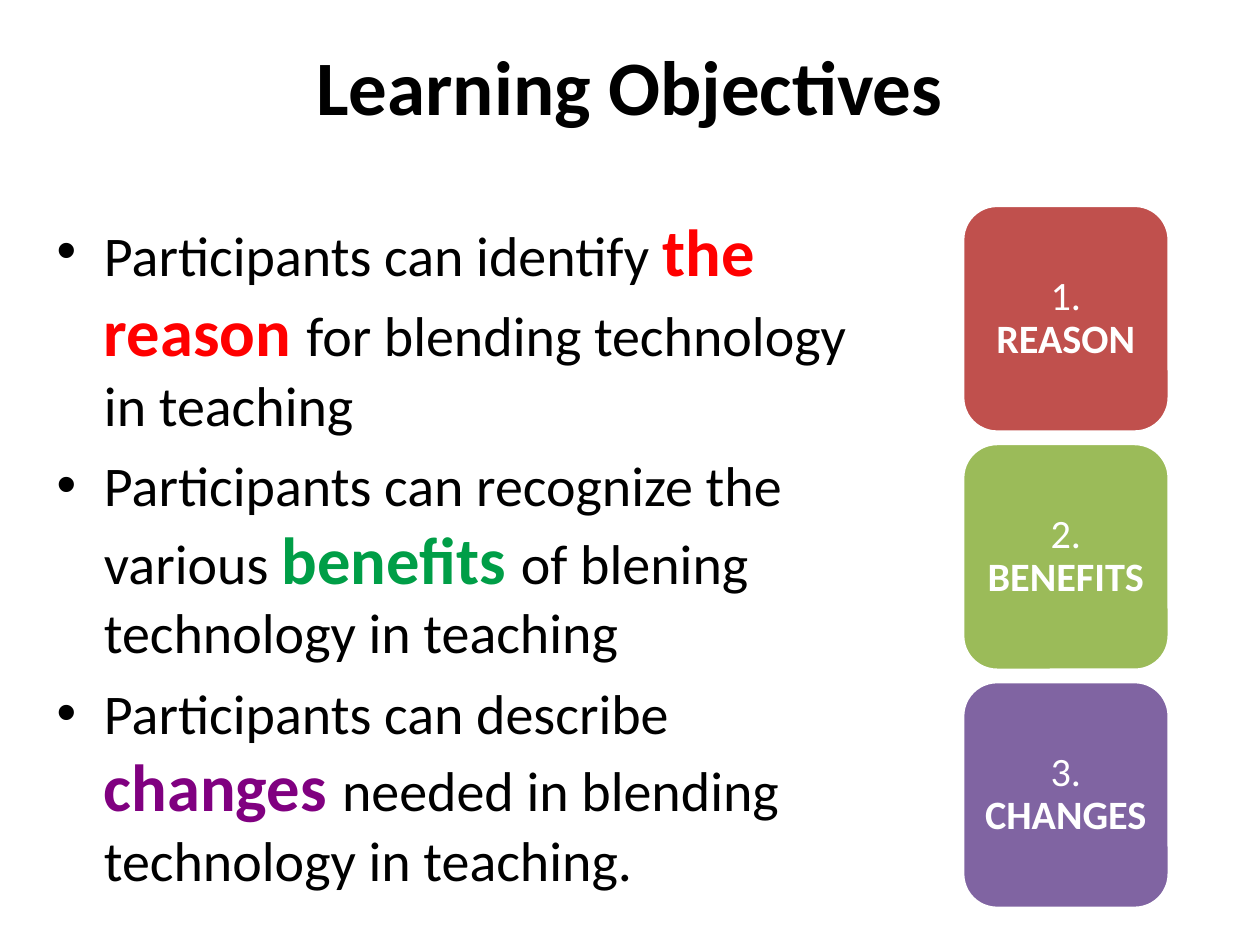
"""Build the Learning Objectives slide."""
from pptx import Presentation
from pptx.dml.color import RGBColor
from pptx.enum.shapes import MSO_SHAPE
from pptx.enum.text import MSO_ANCHOR, MSO_AUTO_SIZE, PP_ALIGN
from pptx.util import Inches, Pt

ROUNDED = MSO_SHAPE.ROUNDED_RECTANGLE
MIDDLE, CENTER = MSO_ANCHOR.MIDDLE, PP_ALIGN.CENTER
NO_FIT = MSO_AUTO_SIZE.NONE
BLACK, WHITE = "000000", "FFFFFF"

TITLE = "Learning Objectives"
OBJECTIVES = [
    ("Participants can identify ", "the reason ",
     "for blending technology in teaching", "FF0000"),
    ("Participants can recognize the various ", "benefits ",
     "of blening technology in teaching", "009E47"),
    ("Participants can describe ", "changes ",
     "needed in blending technology in teaching.", "800080"),
]
CARDS = [("REASON", "C0504D"), ("BENEFITS", "9BBB59"), ("CHANGES", "8064A2")]
CARD_LEFT, CARD_TOP, CARD_W, CARD_H, CARD_PITCH = 7.64, 1.63, 1.64, 1.8, 1.89


def color(value):
    return RGBColor.from_string(value)


def add_run(p, text, size=32, fill=BLACK, bold=False):
    r = p.add_run()
    r.text = text
    r.font.name = "Calibri"
    r.font.size = Pt(size)
    r.font.bold = bold
    r.font.color.rgb = color(fill)


def place(sp, left, top, width, height):
    sp.left, sp.top = Inches(left), Inches(top)
    sp.width, sp.height = Inches(width), Inches(height)
    sp.text_frame.auto_size = NO_FIT


def add_card(slide, number, label, fill):
    top = CARD_TOP + (number - 1) * CARD_PITCH
    sp = slide.shapes.add_shape(ROUNDED, Inches(CARD_LEFT), Inches(top),
                                Inches(CARD_W), Inches(CARD_H))
    sp.shadow.inherit = False
    sp.fill.solid()
    sp.fill.fore_color.rgb = color(fill)
    sp.line.color.rgb = color(WHITE)
    sp.line.width = Pt(2)
    tf = sp.text_frame
    tf.word_wrap = True
    tf.vertical_anchor = MIDDLE
    tf.margin_left = tf.margin_right = Inches(0.09)
    p = tf.paragraphs[0]
    p.alignment = CENTER
    p.line_spacing = 0.9
    add_run(p, f"{number}. ", size=23, fill=WHITE)
    add_run(p, label, size=23, fill=WHITE, bold=True)


def main():
    prs = Presentation()
    prs.slide_width, prs.slide_height = Inches(10), Inches(7.5)
    slide = prs.slides.add_slide(prs.slide_layouts[1])
    title, body = slide.placeholders

    place(title, 0.5, 0.13, 9, 1.09)
    add_run(title.text_frame.paragraphs[0], TITLE, size=44, bold=True)

    place(body, 0.35, 1.62, 6.77, 5.51)
    tf = body.text_frame
    for i, (before, key, after, fill) in enumerate(OBJECTIVES):
        p = tf.add_paragraph() if i else tf.paragraphs[0]
        add_run(p, before)
        add_run(p, key, size=38, fill=fill, bold=True)
        add_run(p, after)

    for number, (label, fill) in enumerate(CARDS, 1):
        add_card(slide, number, label, fill)
    prs.save("out.pptx")


if __name__ == "__main__":
    main()
